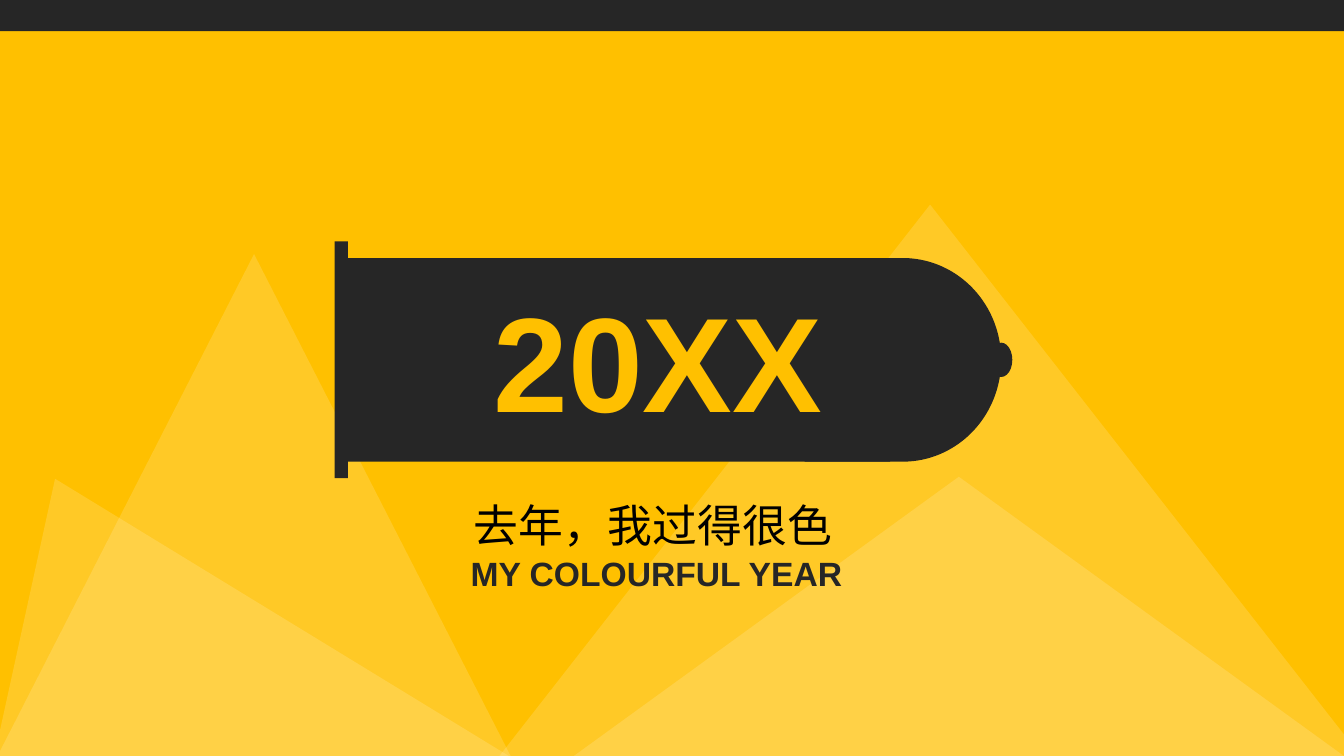
from lxml import etree
from pptx import Presentation
from pptx.dml.color import RGBColor
from pptx.enum.shapes import MSO_SHAPE
from pptx.enum.text import MSO_ANCHOR, MSO_AUTO_SIZE, PP_ALIGN
from pptx.oxml.ns import qn
from pptx.util import Inches, Pt

TRIANGLE = MSO_SHAPE.ISOSCELES_TRIANGLE
RECTANGLE = MSO_SHAPE.RECTANGLE
DELAY = MSO_SHAPE.FLOWCHART_DELAY
OVAL = MSO_SHAPE.OVAL

COLORS = {"yellow": "FFC000", "dark": "262626", "white": "FFFFFF", "black": "000000"}
WIDTH, HEIGHT = 13.33, 7.5
MOUNTAIN_OPACITY = 15

MOUNTAINS = [
    ((4.93, 2.03, 8.59, 5.5), 0.5),
    ((-0.06, 4.75, 5.14, 2.77), 0.118),
    ((-0.04, 2.52, 5.12, 5.01), 0.5),
    ((5.65, 4.73, 7.72, 2.8), 0.5),
]
TOP_BAR = (0, 0, WIDTH, 0.31)

BADGE_MIDDLE = 3.57
BADGE_PARTS = [
    (DELAY, 7.98, 1.95, 2.02),
    (RECTANGLE, 3.41, 5.42, 2.02),
    (RECTANGLE, 3.32, 0.13, 2.35),
    (OVAL, 9.82, 0.22, 0.34),
]

YEAR = ("20XX", (4.78, 2.71, 3.49, 1.72))
ENGLISH = ("MY COLOURFUL YEAR", (4.55, 5.44, 3.92, 0.5))
CHINESE = ("去年，我过得很色", (4.58, 4.89, 3.79, 0.64))


def add_filled(shapes, kind, box, color, opacity=100):
    shape = shapes.add_shape(kind, *map(Inches, box))
    shape.shadow.inherit = False
    shape.line.fill.background()
    shape.fill.solid()
    shape.fill.fore_color.rgb = RGBColor.from_string(COLORS[color])
    if opacity < 100:
        fill_color = shape.element.spPr.find(qn("a:solidFill"))[0]
        etree.SubElement(fill_color, qn("a:alpha"), val=str(opacity * 1000))
    return shape


def write_text(shape, text, size, color, font="Arial", bold=False):
    frame = shape.text_frame
    frame.text = text
    frame.word_wrap = False
    frame.auto_size = MSO_AUTO_SIZE.SHAPE_TO_FIT_TEXT
    frame.vertical_anchor = MSO_ANCHOR.TOP
    paragraph = frame.paragraphs[0]
    paragraph.alignment = PP_ALIGN.CENTER
    run = paragraph.runs[0]
    run.font.size = Pt(size)
    run.font.bold = bold
    run.font.name = font
    run.font.color.rgb = RGBColor.from_string(COLORS[color])
    etree.SubElement(run.font._element, qn("a:ea"), typeface=font)


def main():
    presentation = Presentation()
    presentation.slide_width = Inches(WIDTH)
    presentation.slide_height = Inches(HEIGHT)
    slide = presentation.slides.add_slide(presentation.slide_layouts[5])
    shapes = slide.shapes
    background = slide.background.fill
    background.solid()
    background.fore_color.rgb = RGBColor.from_string(COLORS["yellow"])

    for box, peak in MOUNTAINS:
        mountain = add_filled(shapes, TRIANGLE, box, "white", MOUNTAIN_OPACITY)
        mountain.adjustments[0] = peak
    add_filled(shapes, RECTANGLE, TOP_BAR, "dark")

    text, box = ENGLISH
    write_text(shapes.add_textbox(*map(Inches, box)), text, 24, "dark", bold=True)
    text, box = CHINESE
    write_text(shapes.add_textbox(*map(Inches, box)), text, 32, "black",
               font="Noto Sans CJK TC")

    badge = shapes.add_group_shape()
    for kind, left, width, height in BADGE_PARTS:
        top = BADGE_MIDDLE - height / 2
        add_filled(badge.shapes, kind, (left, top, width, height), "dark")

    title = shapes.title
    text, box = YEAR
    title.left, title.top, title.width, title.height = map(Inches, box)
    write_text(title, text, 96, "yellow", bold=True)
    badge.element.addnext(title.element)
    presentation.save("out.pptx")


if __name__ == "__main__":
    main()
